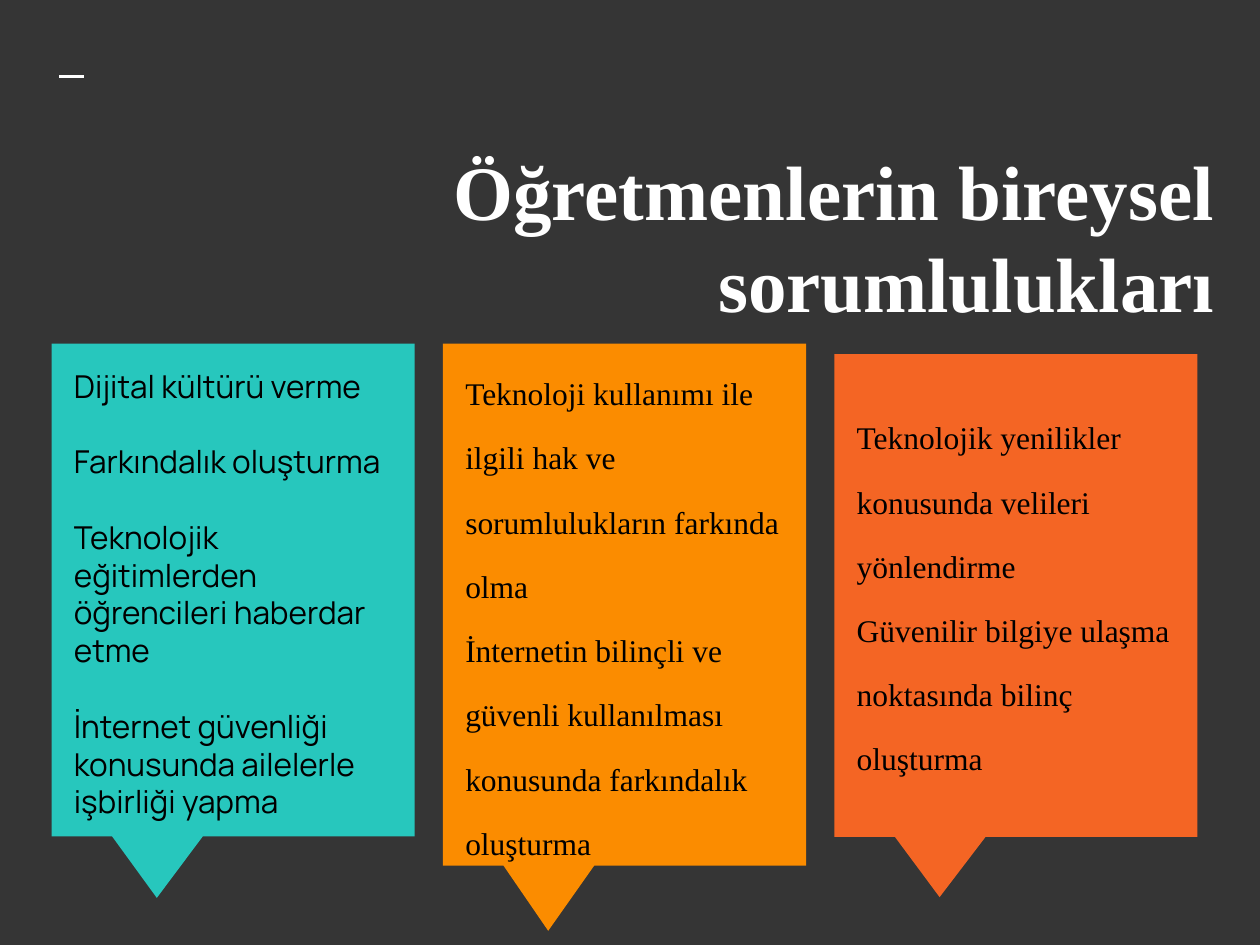
from pptx import Presentation
from pptx.dml.color import RGBColor
from pptx.enum.shapes import MSO_CONNECTOR, MSO_SHAPE
from pptx.enum.text import MSO_ANCHOR, PP_ALIGN
from pptx.oxml.ns import qn
from pptx.util import Cm, Pt
from lxml.etree import SubElement

DARK = RGBColor(0x35, 0x35, 0x35)
WHITE = RGBColor(0xFF, 0xFF, 0xFF)
BLACK = RGBColor(0, 0, 0)
TEAL = RGBColor(0x27, 0xC7, 0xBD)
AMBER = RGBColor(0xFB, 0x8C, 0x00)
ORANGE = RGBColor(0xF4, 0x65, 0x24)

SERIF = "Times New Roman"
SANS = "Manrope"

CARD_LEFT, CARD_STEP, CARD_WIDTH = 1.04, 7.89, 7.32
TEXT_INDENT, TEXT_WIDTH = 0.2, 6.88

# colour, card top and height, text top and height, font, line spacing,
# space after (pt), paragraphs
CARDS = [
    (TEAL, 6.93, 9.93, 7.14, 7.92, SANS, 1, 21.6, [
        "Dijital kültürü verme",
        "Farkındalık oluşturma",
        "Teknolojik eğitimlerden öğrencileri haberdar etme",
        "İnternet güvenliği konusunda ailelerle işbirliği yapma",
    ]),
    (AMBER, 6.93, 10.52, 6.76, 8.33, SERIF, 1.7, 0, [
        "Teknoloji kullanımı ile ilgili hak ve sorumlulukların farkında olma",
        "İnternetin bilinçli ve güvenli kullanılması konusunda farkındalık "
        "oluşturma",
    ]),
    (ORANGE, 7.14, 9.73, 7.65, 7.42, SERIF, 1.7, 0, [
        "Teknolojik yenilikler konusunda velileri yönlendirme",
        "Güvenilir bilgiye ulaşma noktasında bilinç oluşturma",
    ]),
]


def add_dash(s):
    line = s.shapes.add_connector(
        MSO_CONNECTOR.STRAIGHT, Cm(1.19), Cm(1.54), Cm(1.7), Cm(1.54))
    line.line.color.rgb = WHITE
    line.line.width = Pt(1.5)
    SubElement(line._element.spPr, qn("a:effectLst"))


def add_callout(s, left, top, height, color):
    sp = s.shapes.add_shape(MSO_SHAPE.RECTANGULAR_CALLOUT, Cm(left), Cm(top),
                            Cm(CARD_WIDTH), Cm(height))
    sp.adjustments[0] = -0.21
    sp.adjustments[1] = 0.625
    sp.fill.solid()
    sp.fill.fore_color.rgb = color
    sp.line.fill.background()
    sp.shadow.inherit = False


def add_text(s, left, top, width, height, paragraphs, font, size, color,
             bold=False, align=PP_ALIGN.LEFT, spacing=1, after=0):
    tf = s.shapes.add_textbox(Cm(left), Cm(top), Cm(width), Cm(height)).text_frame
    tf.word_wrap = True
    tf.vertical_anchor = MSO_ANCHOR.TOP
    tf.margin_left = tf.margin_right = Cm(0.25)
    tf.margin_top = tf.margin_bottom = Cm(0.25)
    tf.text = "\n".join(paragraphs)
    for p in tf.paragraphs:
        p.alignment = align
        p.line_spacing = float(spacing)
        p.space_after = Pt(after)
        for r in p.runs:
            r.font.name = font
            r.font.size = Pt(size)
            r.font.bold = bold
            r.font.color.rgb = color


def main():
    prs = Presentation()
    prs.slide_width, prs.slide_height = Cm(25.4), Cm(19.05)
    s = prs.slides.add_slide(prs.slide_layouts[6])
    s.background.fill.solid()
    s.background.fill.fore_color.rgb = DARK

    add_dash(s)
    add_text(s, 0.79, 2.64, 23.95, 3.78,
             ["Öğretmenlerin bireysel sorumlulukları"], SERIF, 44, WHITE,
             bold=True, align=PP_ALIGN.RIGHT)
    for i, card in enumerate(CARDS):
        (color, top, height, text_top, text_height,
         font, spacing, after, paragraphs) = card
        left = CARD_LEFT + i * CARD_STEP
        add_callout(s, left, top, height, color)
        add_text(s, left + TEXT_INDENT, text_top, TEXT_WIDTH, text_height,
                 paragraphs, font, 18, BLACK, spacing=spacing, after=after)

    prs.save("out.pptx")


if __name__ == "__main__":
    main()
